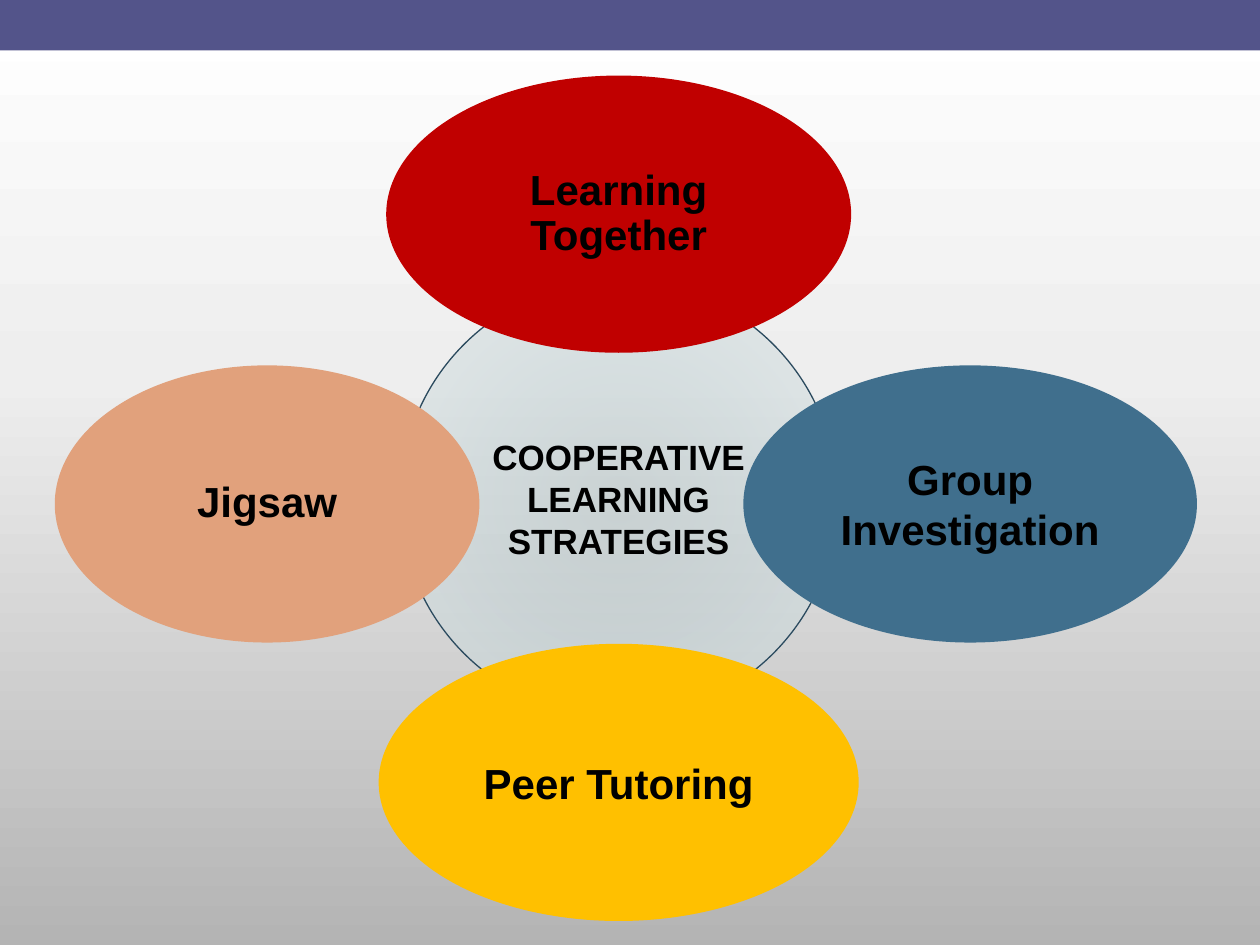
import pptx
import pptx.dml.color
import pptx.enum.shapes
import pptx.enum.text
import pptx.oxml
import pptx.oxml.ns
import pptx.util

inch = pptx.util.Inches
rgb = pptx.dml.color.RGBColor.from_string
SHAPE = pptx.enum.shapes.MSO_SHAPE
W, H = 10, 7.5


def add_shape(kind, left, top, width, height, color):
    sp = slide.shapes.add_shape(kind, inch(left), inch(top), inch(width), inch(height))
    sp.shadow.inherit = False
    sp.fill.solid()
    sp.fill.fore_color.rgb = rgb(color)
    sp.line.fill.background()
    return sp


def set_gradient(props, stops, direction):
    """Replace the solid fill in props by (position %, colour, opacity %) stops."""
    gs = "".join(
        f'<a:gs pos="{pos * 1000}"><a:srgbClr val="{color}">'
        f'<a:alpha val="{alpha * 1000}"/></a:srgbClr></a:gs>'
        for pos, color, alpha in stops)
    grad = pptx.oxml.parse_xml(
        f'<a:gradFill {pptx.oxml.ns.nsdecls("a")} rotWithShape="1">'
        f'<a:gsLst>{gs}</a:gsLst>{direction}</a:gradFill>')
    props.replace(props.find(pptx.oxml.ns.qn("a:solidFill")), grad)


prs = pptx.Presentation()
prs.slide_width, prs.slide_height = inch(W), inch(H)
slide = prs.slides.add_slide(prs.slide_layouts[6])

# Background and top band
slide.background.fill.solid()
set_gradient(slide._element.cSld.bg.bgPr,
             [(0, "FFFFFF", 100), (40, "EEEEEE", 100), (100, "B4B4B4", 100)],
             '<a:lin ang="5400000" scaled="0"/>')
add_shape(SHAPE.RECTANGLE, 0, 0.24, W, 0.25, "FFFFFF")
add_shape(SHAPE.RECTANGLE, 0, 0, W, 0.4, "53548A")

# Hub first, then the four strategies over it:
# centre x, centre y, width, height, fill, text size, line spacing, paragraphs
ovals = [
    (4.91, 3.96, 3.47, 3.47, "C0D1D4", 20, 1, ["COOPERATIVE", "LEARNING STRATEGIES"]),
    (4.91, 1.7, 3.69, 2.2, "C00000", 24, 0.9, ["Learning Together"]),
    (7.7, 4, 3.6, 2.2, "406F8D", 24, 1, ["Group Investigation"]),
    (4.91, 6.21, 3.81, 2.2, "FFC000", 24, 1, ["Peer Tutoring"]),
    (2.12, 4, 3.37, 2.2, "E1A17C", 24, 0.9, ["Jigsaw"]),
]
for i, (cx, cy, w, h, color, size, spacing, lines) in enumerate(ovals):
    sp = add_shape(SHAPE.OVAL, cx - w / 2, cy - h / 2, w, h, color)
    if i == 0:
        set_gradient(sp._element.spPr,
                     [(0, "B2C2C4", 50), (45, "C0D1D4", 50), (100, "DDE6E7", 50)],
                     '<a:path path="circle"><a:fillToRect l="100000" t="100000" '
                     'r="100000" b="100000"/></a:path>')
        sp.line.color.rgb = rgb("2B4A5E")
        sp.line.width = pptx.util.Pt(0.75)
    tf = sp.text_frame
    tf.word_wrap = True
    tf.vertical_anchor = pptx.enum.text.MSO_ANCHOR.MIDDLE
    tf.margin_left = tf.margin_right = tf.margin_top = tf.margin_bottom = inch(0.03)
    tf.text = "\n".join(lines)
    for p in tf.paragraphs:
        p.alignment = pptx.enum.text.PP_ALIGN.CENTER
        p.line_spacing = spacing
        for r in p.runs:
            r.font.name = "Arial"
            r.font.size = pptx.util.Pt(size)
            r.font.bold = True
            r.font.color.rgb = rgb("000000")

prs.save("out.pptx")
